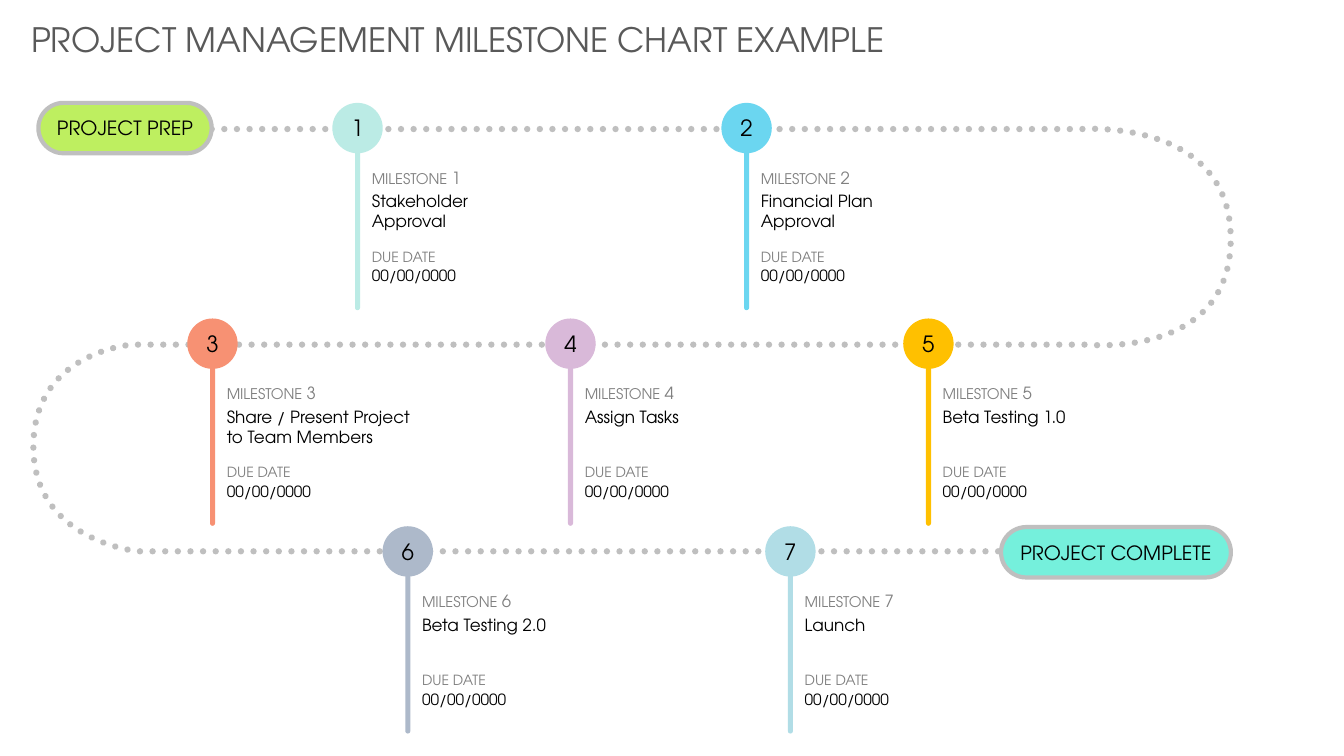
from lxml.etree import SubElement
from pptx import Presentation
from pptx.dml.color import RGBColor
from pptx.enum.dml import MSO_LINE
from pptx.enum.shapes import MSO_SHAPE
from pptx.enum.text import MSO_ANCHOR, MSO_AUTO_SIZE, PP_ALIGN
from pptx.oxml.ns import qn
from pptx.util import Pt

FONT = "TeX Gyre Adventor"
BLACK = RGBColor(0x00, 0x00, 0x00)
TITLE_GREY = RGBColor(0x59, 0x59, 0x59)
LABEL_GREY = RGBColor(0x80, 0x80, 0x80)
TRACK_GREY = RGBColor(0xBF, 0xBF, 0xBF)
LIME = RGBColor(0xBE, 0xEF, 0x60)
TURQUOISE = RGBColor(0x75, 0xF0, 0xDC)
MINT = RGBColor(0xBB, 0xEB, 0xE5)
SKY = RGBColor(0x6B, 0xD6, 0xF0)
CORAL = RGBColor(0xF7, 0x91, 0x73)
LILAC = RGBColor(0xD9, 0xB9, 0xD9)
AMBER = RGBColor(0xFF, 0xC0, 0x00)
SLATE = RGBColor(0xAD, 0xB9, 0xCA)
PALE_BLUE = RGBColor(0xB1, 0xDD, 0xE6)

MARKER = 36  # diameter of a milestone marker and height of a pill
STEM_WIDTH = 3.6
TASK_WIDTH = 98.6
ROW_TOPS = (73.5, 227.5, 375.9)

# Left edge and row of each marker, task, task width, colour
MILESTONES = [
    (237.4, 0, "Stakeholder Approval", TASK_WIDTH, MINT),
    (515.3, 0, "Financial Plan Approval", TASK_WIDTH, SKY),
    (133.8, 1, "Share / Present Project to Team Members", 139.7, CORAL),
    (389.5, 1, "Assign Tasks", TASK_WIDTH, LILAC),
    (645.2, 1, "Beta Testing 1.0", TASK_WIDTH, AMBER),
    (273.3, 2, "Beta Testing 2.0", TASK_WIDTH, SLATE),
    (546.6, 2, "Launch", TASK_WIDTH, PALE_BLUE),
]

# Each step ends at its last point; three points make a Bezier curve
TRACK_START = (151.2, 92.2)
TRACK_STEPS = [
    [(772.6, 92.2)],
    [(772.6, 92.2), (879.1, 84.2), (879.1, 170.6)],
    [(879.1, 257), (776.2, 246.2), (776.2, 246.2)],
    [(94.3, 246.2)],
    [(94.3, 246.2), (23.8, 251.3), (23.8, 319)],
    [(23.8, 386.6), (98.6, 393.8), (98.6, 393.8)],
    [(740.2, 393.8)],
]


def style(span, size, colour):
    span.font.name = FONT
    span.font.size = Pt(size)
    span.font.color.rgb = colour


def add_text(shapes, box, spans, inset=True):
    """Add a one-paragraph text box from (text, size, colour) spans."""
    label = shapes.add_textbox(*map(Pt, box))
    frame = label.text_frame
    frame.word_wrap = True
    if not inset:
        frame.margin_left = frame.margin_right = 0
        frame.margin_top = frame.margin_bottom = 0
    para = frame.paragraphs[0]
    for text, size, colour in spans:
        span = para.add_run()
        span.text = text
        style(span, size, colour)
    return frame


def add_block(shapes, preset, box, colour, text="", size=16):
    """Add a filled preset shape with optional centred text."""
    block = shapes.add_shape(preset, *map(Pt, box))
    block.shadow.inherit = False
    block.fill.solid()
    block.fill.fore_color.rgb = colour
    block.line.fill.background()
    if preset == MSO_SHAPE.ROUNDED_RECTANGLE:
        block.adjustments[0] = 0.5
    if text:
        frame = block.text_frame
        frame.margin_left = frame.margin_right = 0
        frame.margin_top = frame.margin_bottom = 0
        frame.vertical_anchor = MSO_ANCHOR.MIDDLE
        para = frame.paragraphs[0]
        para.text = text
        para.alignment = PP_ALIGN.CENTER
        style(para.runs[0], size, BLACK)
    return block


def add_title(page, box):
    text = "PROJECT MANAGEMENT MILESTONE CHART EXAMPLE"
    frame = add_text(page.shapes, box, [(text, 24, TITLE_GREY)])
    frame.auto_size = MSO_AUTO_SIZE.SHAPE_TO_FIT_TEXT


def add_track(page):
    """Draw the dotted track, bending its turns into Bezier curves."""
    builder = page.shapes.build_freeform(*map(Pt, TRACK_START))
    ends = [tuple(map(Pt, step[-1])) for step in TRACK_STEPS]
    builder.add_line_segments(ends, close=False)
    track = builder.convert_to_shape()
    track.shadow.inherit = False
    track.fill.background()
    track.line.color.rgb = TRACK_GREY
    track.line.width = Pt(4.5)
    track.line.dash_style = MSO_LINE.ROUND_DOT
    outline = track._element.spPr
    outline.find(qn("a:ln")).set("cap", "rnd")
    for segment, step in zip(list(outline.iter(qn("a:lnTo"))), TRACK_STEPS):
        if len(step) == 3:
            segment.tag = qn("a:cubicBezTo")
            segment.clear()
            for x, y in step:
                SubElement(segment, qn("a:pt"), x=str(Pt(x) - track.left),
                           y=str(Pt(y) - track.top))


def add_pill(page, box, text, colour):
    pill = add_block(page.shapes, MSO_SHAPE.ROUNDED_RECTANGLE, box, colour,
                     text, 14)
    pill.line.color.rgb = TRACK_GREY
    pill.line.width = Pt(3)


def add_milestone(page, left, top, number, task, task_width, colour):
    """Group a stem, four texts and a numbered marker."""
    shapes = page.shapes.add_group_shape().shapes
    stem_left = left + (MARKER - STEM_WIDTH) / 2
    add_block(shapes, MSO_SHAPE.ROUNDED_RECTANGLE,
              (stem_left, top + 13.5, STEM_WIDTH, 134.6), colour)
    heading = [("MILESTONE", 10.5, LABEL_GREY), (" ", 11, LABEL_GREY),
               (number, 12, LABEL_GREY)]
    texts = [
        (46.2, 84.2, 18.7, heading),
        (63, task_width, 41, [(task, 12, BLACK)]),
        (103.7, 57.6, 14.4, [("DUE DATE", 10, LABEL_GREY)]),
        (116.7, 64.8, 18.7, [("00/00/0000", 11, BLACK)]),
    ]
    for offset, width, height, spans in texts:
        add_text(shapes, (left + 28.2, top + offset, width, height), spans,
                 inset=False)
    add_block(shapes, MSO_SHAPE.OVAL, (left, top, MARKER, MARKER), colour,
              number)


def main():
    deck = Presentation()
    deck.slide_width, deck.slide_height = Pt(960), Pt(540)
    page = deck.slides.add_slide(deck.slide_layouts[6])

    add_title(page, (15.1, 10.1, 641.5, 36))
    add_track(page)
    add_pill(page, (27.4, ROW_TOPS[0], 123.8, MARKER), "PROJECT PREP", LIME)
    for index, (left, row, task, width, colour) in enumerate(MILESTONES, 1):
        add_milestone(page, left, ROW_TOPS[row], str(index), task, width,
                      colour)
    add_pill(page, (715, 376.5, 164.2, MARKER), "PROJECT COMPLETE", TURQUOISE)

    deck.save("out.pptx")


if __name__ == "__main__":
    main()
